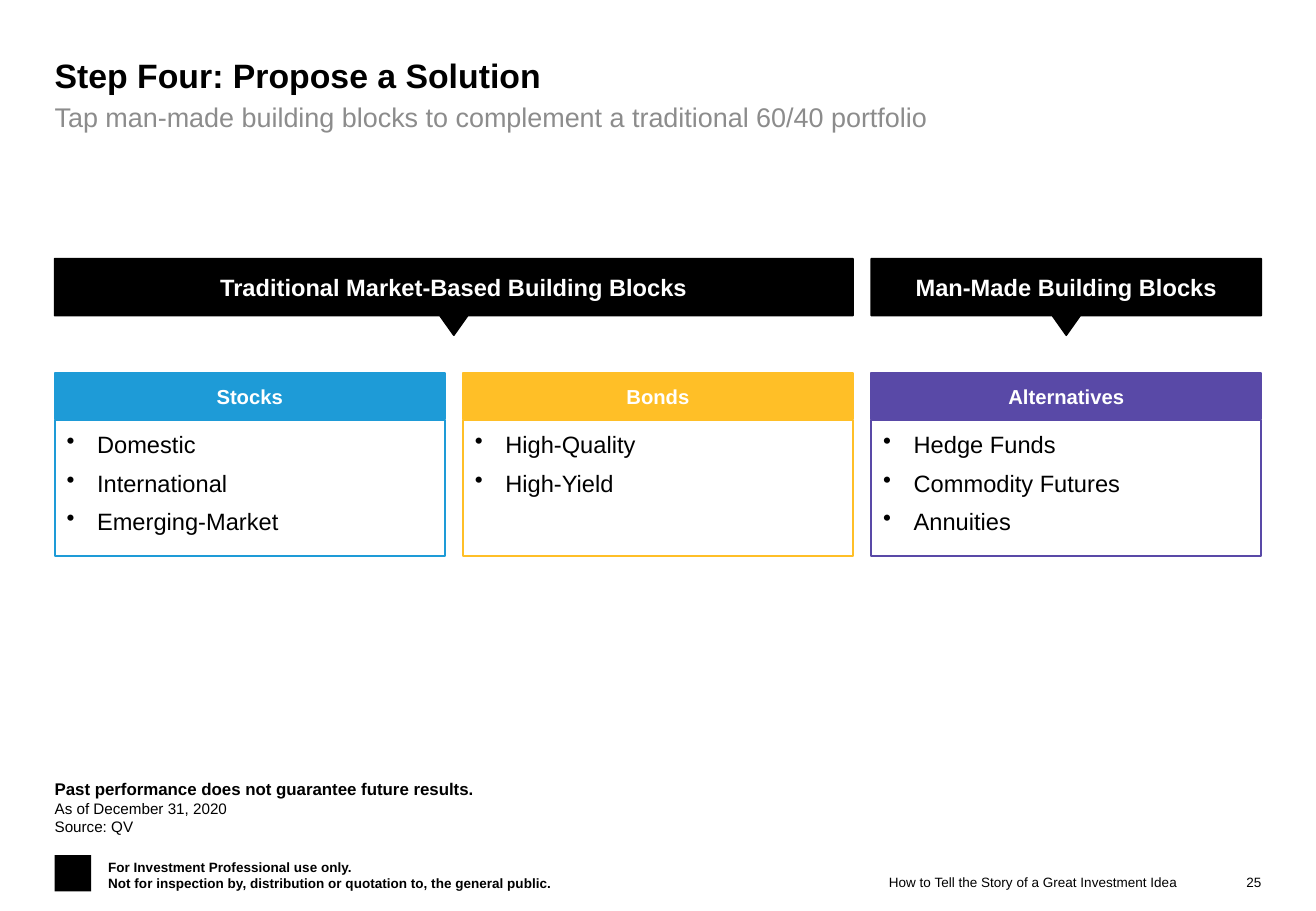
from lxml import etree
from pptx import Presentation, util as u
from pptx.dml.color import RGBColor
from pptx.enum import shapes, text

BLACK = RGBColor(0x00, 0x00, 0x00)
WHITE = RGBColor(0xFF, 0xFF, 0xFF)
GRAY = RGBColor(0x8C, 0x8C, 0x8C)
BLUE = RGBColor(0x1E, 0x9B, 0xD7)
GOLD = RGBColor(0xFF, 0xBF, 0x27)
PURPLE = RGBColor(0x59, 0x49, 0xA7)

LEFT, CENTER, RIGHT = text.PP_ALIGN.LEFT, text.PP_ALIGN.CENTER, text.PP_ALIGN.RIGHT
TOP, MID, LOW = text.MSO_ANCHOR.TOP, text.MSO_ANCHOR.MIDDLE, text.MSO_ANCHOR.BOTTOM
RECT = shapes.MSO_SHAPE.RECTANGLE
CALLOUT = shapes.MSO_SHAPE.DOWN_ARROW_CALLOUT

TITLE = "Step Four: Propose a Solution"
SUB = "Tap man-made building blocks to complement a traditional 60/40 portfolio"
GROUPS = [
    ("Traditional Market-Based Building Blocks", 0, 2),
    ("Man-Made Building Blocks", 2, 1),
]
BLOCKS = [
    ("Stocks", BLUE, ["Domestic", "International", "Emerging-Market"]),
    ("Bonds", GOLD, ["High-Quality", "High-Yield"]),
    ("Alternatives", PURPLE, ["Hedge Funds", "Commodity Futures", "Annuities"]),
]
NOTES = [
    ("Past performance does not guarantee future results.", 10, True),
    ("As of December 31, 2020", 9, False),
    ("Source: QV", 9, False),
]
LEGAL = [
    ("For Investment Professional use only.", 8, True),
    ("Not for inspection by, distribution or quotation to, the general public.", 8, True),
]
DECK = "How to Tell the Story of a Great Investment Idea"
PAGE = "25"

PX = 9144
EDGE, FULL = 45, 993
COL, GAP = 321, 15
ARROW = (0.355, 0.177, 0.25, 0.744)

deck = Presentation()
deck.slide_width, deck.slide_height = 1083 * PX, 750 * PX
slide = deck.slides.add_slide(deck.slide_layouts[6])


def write(shape, lines, color=BLACK, align=LEFT, anchor=TOP, pad=(0, 0)):
    frame = shape.text_frame
    frame.word_wrap = True
    frame.vertical_anchor = anchor
    frame.margin_left = frame.margin_right = pad[0] * PX
    frame.margin_top = frame.margin_bottom = pad[1] * PX
    frame.text = "\n".join(line[0] for line in lines)
    for para, (_, size, bold) in zip(frame.paragraphs, lines):
        para.alignment = align
        para.font.name = "Arial"
        para.font.size = u.Pt(size)
        para.font.bold = bold
        para.font.color.rgb = color
    return frame.paragraphs


def label(box, lines, **style):
    shape = slide.shapes.add_textbox(*(n * PX for n in box))
    write(shape, lines, **style)


def block(kind, box, line, fill=None):
    shape = slide.shapes.add_shape(kind, *(n * PX for n in box))
    shape.shadow.inherit = False
    if fill is None:
        shape.fill.background()
    else:
        shape.fill.solid()
        shape.fill.fore_color.rgb = fill
    shape.line.color.rgb = line
    shape.line.width = u.Pt(1)
    return shape


def head(shape, words, size):
    write(shape, [(words, size, True)], WHITE, CENTER, MID, (10, 8))


def bullet(para):
    para.space_after = u.Pt(6)
    props = para._p.get_or_add_pPr()
    props.set("marL", str(25 * PX))
    props.set("indent", str(-25 * PX))
    mark = etree.Element("{http://schemas.openxmlformats.org/drawingml/2006/main}buChar", char="•")
    props.insert(list(props).index(props.find("{*}defRPr")), mark)


def left(col):
    return EDGE + col * (COL + GAP)


label((EDGE, 45, FULL, 34), [(TITLE, 20, True)])
label((EDGE, 83, FULL, 77), [(SUB, 16, False)], color=GRAY)

for col, (name, color, items) in enumerate(BLOCKS):
    head(block(RECT, (left(col), 307, COL, 38), color, color), name, 12)
    body = block(RECT, (left(col), 346, COL, 112), color)
    for para in write(body, [(item, 14, False) for item in items], pad=(10, 8)):
        bullet(para)

for name, col, span in GROUPS:
    wide = span * COL + (span - 1) * GAP
    shape = block(CALLOUT, (left(col), 213, wide, 63), BLACK, BLACK)
    for i, value in enumerate(ARROW):
        shape.adjustments[i] = value
    head(shape, name, 14)

label((EDGE, 641, FULL, 47), NOTES, anchor=LOW)
block(RECT, (EDGE, 704, 30, 30), BLACK, BLACK).line.fill.background()
label((89, 707, 411, 27), LEGAL, anchor=LOW)
label((691, 719, 278, 15), [(DECK, 8, False)], align=RIGHT, anchor=MID)
label((1006, 719, 32, 15), [(PAGE, 8, False)], align=RIGHT, anchor=MID)

deck.save("out.pptx")
